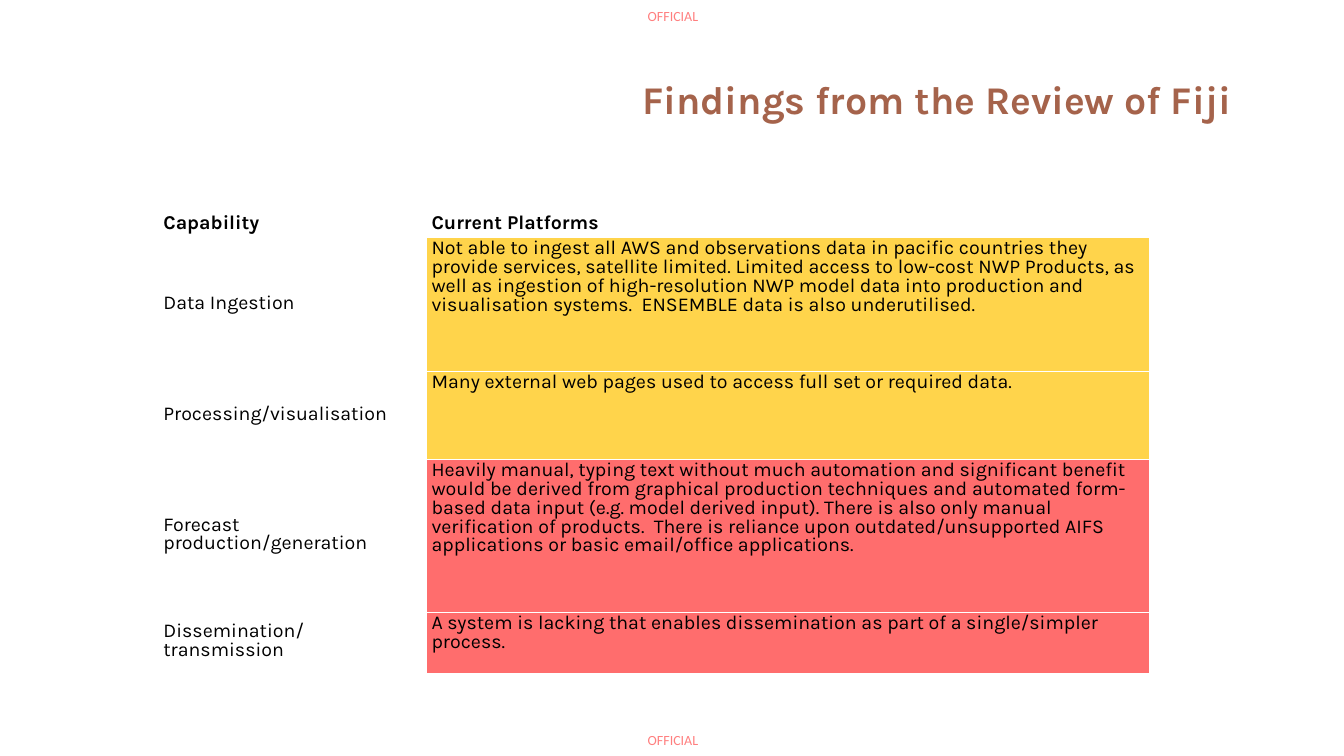
from lxml import etree
from pptx import Presentation
from pptx.dml.color import RGBColor
from pptx.enum.text import MSO_ANCHOR, MSO_AUTO_SIZE, PP_ALIGN
from pptx.oxml.ns import qn
from pptx.util import Inches, Pt

TOP, MIDDLE = MSO_ANCHOR.TOP, MSO_ANCHOR.MIDDLE
LEFT, CENTER = PP_ALIGN.LEFT, PP_ALIGN.CENTER
NO_FIT, GROW = MSO_AUTO_SIZE.NONE, MSO_AUTO_SIZE.SHAPE_TO_FIT_TEXT
TITLE_ONLY = 5

COLOURS = {
    "title": "A5634B",
    "text": "000000",
    "marking": "FF0000",
    "border": "FFFFFF",
    "partial": "FFD44B",
    "lacking": "FF6D6D",
}

COLUMN_WIDTHS = (2.66, 7.17)
# Row height, capability, finding, rating
FINDINGS = (
    (0.24, "Capability", "Current Platforms", None),
    (1.33, "Data Ingestion",
     "Not able to ingest all AWS and observations data in pacific countries they "
     "provide services, satellite limited. Limited access to low-cost NWP Products, "
     "as well as ingestion of high-resolution NWP model data into production and "
     "visualisation systems.  ENSEMBLE data is also underutilised.", "partial"),
    (0.87, "Processing/visualisation",
     "Many external web pages used to access full set or required data.", "partial"),
    (1.52, "Forecast production/generation",
     "Heavily manual, typing text without much automation and significant benefit "
     "would be derived from graphical production techniques and automated form-based "
     "data input (e.g. model derived input). There is also only manual verification "
     "of products.  There is reliance upon outdated/unsupported AIFS applications or "
     "basic email/office applications.", "lacking"),
    (0.6, "Dissemination/transmission",
     "A system is lacking that enables dissemination as part of a single/simpler "
     "process.", "lacking"),
)


def set_values(target, values):
    for name, value in values.items():
        setattr(target, name, value)


def write_text(frame, text, colour, font, align=LEFT, spacing=1.0):
    para = frame.paragraphs[0]
    set_values(para, {"alignment": align, "line_spacing": spacing})
    span = para.add_run()
    span.text = text
    set_values(span.font, font)
    span.font.color.rgb = RGBColor.from_string(COLOURS[colour])
    return span


def add_marking(page, top):
    """Add a half-transparent security marking at the given height."""
    box = page.shapes.add_textbox(Inches(6.41), Inches(top), Inches(0.53), Inches(0.17))
    set_values(box.text_frame, {
        "margin_left": 0, "margin_right": 0, "margin_top": 0, "margin_bottom": 0,
        "word_wrap": False, "auto_size": GROW,
    })
    span = write_text(box.text_frame, "OFFICIAL", "marking",
                      {"name": "Calibri", "size": Pt(10)}, CENTER)
    colour = span.font.fill._xPr.find(f".//{qn('a:srgbClr')}")
    etree.SubElement(colour, qn("a:alpha"), val="50000")


def add_title(page, text):
    title = page.shapes.title
    set_values(title, {"left": Inches(6.27), "top": Inches(0.38),
                       "width": Inches(6.27), "height": Inches(1.25)})
    set_values(title.text_frame, {"vertical_anchor": MIDDLE, "word_wrap": True,
                                  "auto_size": NO_FIT})
    write_text(title.text_frame, text, "title",
               {"name": "Karla", "size": Pt(28), "bold": True}, spacing=0.9)


def add_borders(cell):
    properties = cell._tc.get_or_add_tcPr()
    for side in ("lnL", "lnR", "lnT", "lnB"):
        line = etree.SubElement(properties, qn(f"a:{side}"), w=str(Pt(0.5)))
        fill = etree.SubElement(line, qn("a:solidFill"))
        etree.SubElement(fill, qn("a:srgbClr"), val=COLOURS["border"])


def fill_cell(cell, text, rating, bold, anchor):
    set_values(cell, {
        "margin_left": Inches(0.05), "margin_right": Inches(0.05),
        "margin_top": Inches(0.03), "margin_bottom": Inches(0.03),
        "vertical_anchor": anchor,
    })
    add_borders(cell)
    if rating:
        cell.fill.solid()
        cell.fill.fore_color.rgb = RGBColor.from_string(COLOURS[rating])
    else:
        cell.fill.background()
    write_text(cell.text_frame, text, "text",
               {"name": "Karla", "size": Pt(14), "bold": bold}, spacing=Pt(13.5))


def add_findings_table(page):
    height = sum(finding[0] for finding in FINDINGS)
    table = page.shapes.add_table(
        len(FINDINGS), len(COLUMN_WIDTHS), Inches(1.57), Inches(2.11),
        Inches(sum(COLUMN_WIDTHS)), Inches(height)).table
    set_values(table, {"first_row": False, "horz_banding": False})
    for column, width in zip(table.columns, COLUMN_WIDTHS):
        column.width = Inches(width)
    for index, (row_height, capability, finding, rating) in enumerate(FINDINGS):
        header = index == 0
        table.rows[index].height = Inches(row_height)
        fill_cell(table.cell(index, 0), capability, None, header,
                  TOP if header else MIDDLE)
        fill_cell(table.cell(index, 1), finding, rating, header, TOP)


def main():
    deck = Presentation()
    set_values(deck, {"slide_width": Inches(13.33), "slide_height": Inches(7.5)})
    page = deck.slides.add_slide(deck.slide_layouts[TITLE_ONLY])
    for top in (0.07, 7.26):
        add_marking(page, top)
    add_title(page, "Findings from the Review of Fiji")
    add_findings_table(page)
    deck.save("out.pptx")


if __name__ == "__main__":
    main()
